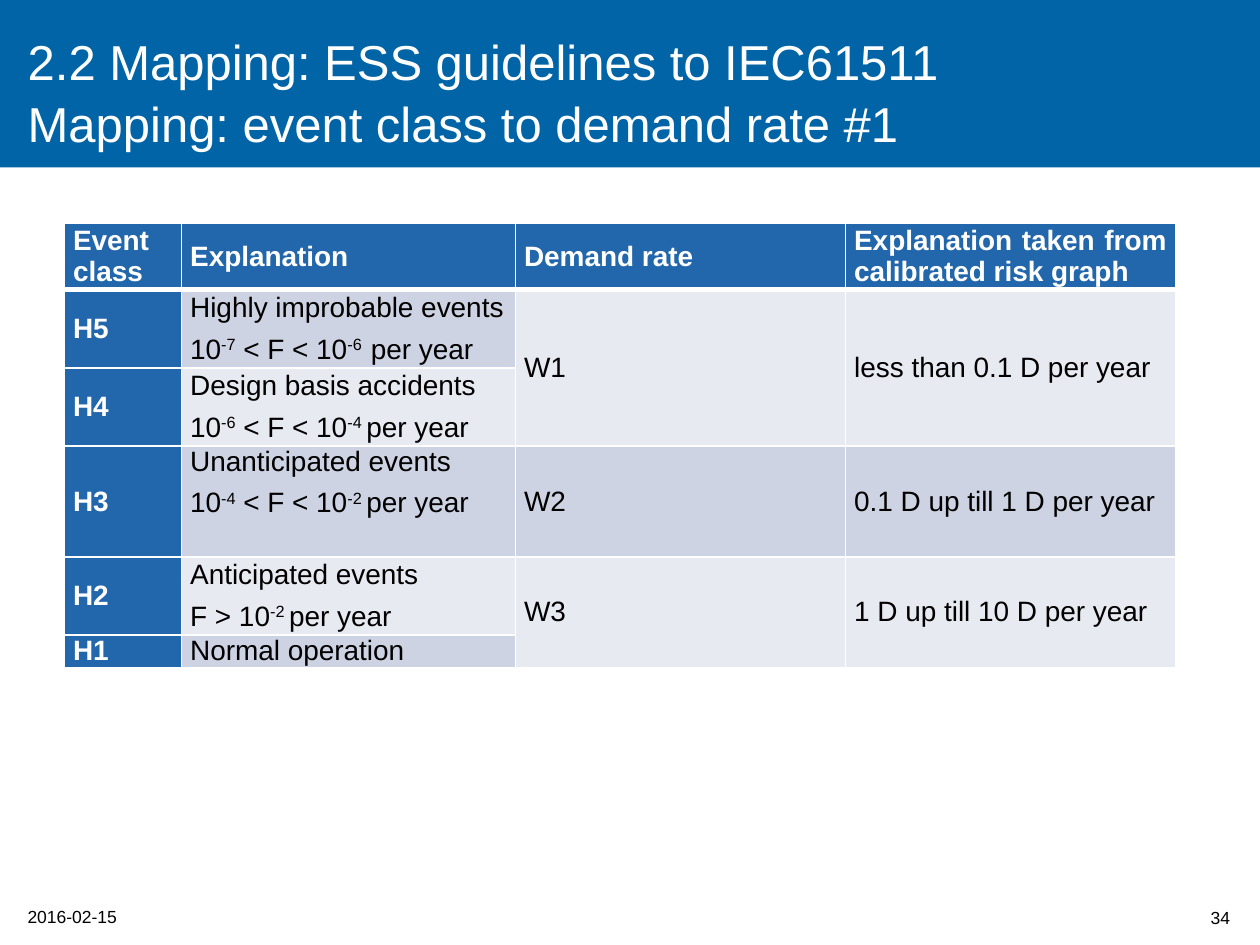
from lxml import etree
from pptx import Presentation
from pptx.dml.color import RGBColor
from pptx.enum import shapes, text
from pptx.oxml.ns import qn
from pptx.util import Inches, Pt

COLORS = {
    "band": "0064A6", "head": "2266AB", "dark": "CDD3E2", "light": "E8EAF1",
    "white": "FFFFFF", "black": "000000",
}


def write(p, content, size=16, color="black", bold=False, align=text.PP_ALIGN.LEFT):
    """Fill a paragraph; ^marks^ enclose superscripts and a newline breaks the line."""
    p.alignment = align
    for i, part in enumerate(content.split("^")):
        for j, line in enumerate(part.split("\n")):
            if j:
                p.add_line_break()
            r = p.add_run()
            r.text = line
            r.font.name = "Arial"
            r.font.size = Pt(size)
            r.font.bold = bold
            r.font.color.rgb = RGBColor.from_string(COLORS[color])
            if i % 2:
                r._r.get_or_add_rPr().set("baseline", "30000")


def set_borders(cell, bottom):
    """Draw white cell borders, with the given bottom width in points."""
    tc_pr = cell._tc.get_or_add_tcPr()
    for i, (side, width) in enumerate((("lnL", 1), ("lnR", 1), ("lnT", 1), ("lnB", bottom))):
        ln = etree.Element(qn("a:" + side), w=str(Pt(width)))
        fill = etree.SubElement(ln, qn("a:solidFill"))
        etree.SubElement(fill, qn("a:srgbClr"), val=COLORS["white"])
        tc_pr.insert(i, ln)


prs = Presentation()
prs.slide_width, prs.slide_height = Inches(10), Inches(7.5)
s = prs.slides.add_slide(prs.slide_layouts[5])

# Title on its band
band = s.shapes.add_shape(shapes.MSO_SHAPE.RECTANGLE, 0, 0, Inches(10), Inches(1.33))
band.shadow.inherit = False
band.fill.solid()
band.fill.fore_color.rgb = RGBColor.from_string(COLORS["band"])
band.line.fill.background()

title = s.shapes.title
title.left, title.top = Inches(0.12), Inches(0.21)
title.width, title.height = Inches(7.56), Inches(1.02)
s.shapes._spTree.append(title._element)
tf = title.text_frame
tf.auto_size = text.MSO_AUTO_SIZE.NONE
tf.vertical_anchor = text.MSO_ANCHOR.MIDDLE
tf.paragraphs[0].line_spacing = 1.05
write(tf.paragraphs[0],
      "2.2 Mapping: ESS guidelines to IEC61511\nMapping: event class to demand rate #1",
      size=28, color="white")

# Event class table
rows = [
    ["Event class", "Explanation", "Demand rate",
     "Explanation taken from calibrated risk graph"],
    ["H5", "Highly improbable events|10^-7^ < F < 10^-6  ^per year", "W1",
     "less than 0.1 D per year"],
    ["H4", "Design basis accidents|10^-6^ < F < 10^-4 ^per year", "", ""],
    ["H3", "Unanticipated events|10^-4^ < F < 10^-2 ^per year", "W2",
     "0.1 D up till 1 D per year"],
    ["H2", "Anticipated events|F > 10^-2 ^per year", "W3", "1 D up till 10 D per year"],
    ["H1", "Normal operation", "", ""],
]
col_widths = [0.93, 2.65, 2.62, 2.62]
row_heights = [0.53, 0.62, 0.62, 0.88, 0.62, 0.26]
table = s.shapes.add_table(len(rows), len(col_widths), Inches(0.51), Inches(1.77),
                           Inches(sum(col_widths)), Inches(sum(row_heights))).table
for col, width in zip(table.columns, col_widths):
    col.width = Inches(width)
for row, height in zip(table.rows, row_heights):
    row.height = Inches(height)

for i, row in enumerate(rows):
    for j, content in enumerate(row):
        cell = table.cell(i, j)
        header = i == 0 or j == 0
        banded = i == 3 or (j == 1 and i % 2)
        cell.fill.solid()
        cell.fill.fore_color.rgb = RGBColor.from_string(
            COLORS["head" if header else "dark" if banded else "light"])
        set_borders(cell, bottom=3 if i == 0 else 1)
        cell.margin_left = cell.margin_right = Inches(0.07)
        cell.margin_top = cell.margin_bottom = 0
        cell.vertical_anchor = text.MSO_ANCHOR.MIDDLE
        if not content:
            continue
        tf = cell.text_frame
        for k, line in enumerate(content.split("|")):
            p = tf.add_paragraph() if k else tf.paragraphs[0]
            p.space_before = Pt(3 if k else 0)
            p.space_after = Pt(3)
            write(p, line, color="white" if header else "black", bold=header,
                  align=text.PP_ALIGN.JUSTIFY)

table.cell(3, 1).vertical_anchor = text.MSO_ANCHOR.TOP
for i in (1, 4):
    for j in (2, 3):
        table.cell(i, j).merge(table.cell(i + 1, j))

# Date and slide number
for content, left, top, width, height, align, anchor in (
    ("2016-02-15", 0.12, 7.14, 1.65, 0.27, text.PP_ALIGN.LEFT, text.MSO_ANCHOR.TOP),
    ("34", 9.14, 7.08, 0.72, 0.4, text.PP_ALIGN.RIGHT, text.MSO_ANCHOR.MIDDLE),
):
    tf = s.shapes.add_textbox(Inches(left), Inches(top), Inches(width),
                              Inches(height)).text_frame
    tf.word_wrap = True
    tf.vertical_anchor = anchor
    write(tf.paragraphs[0], content, size=10, align=align)

prs.save("out.pptx")
